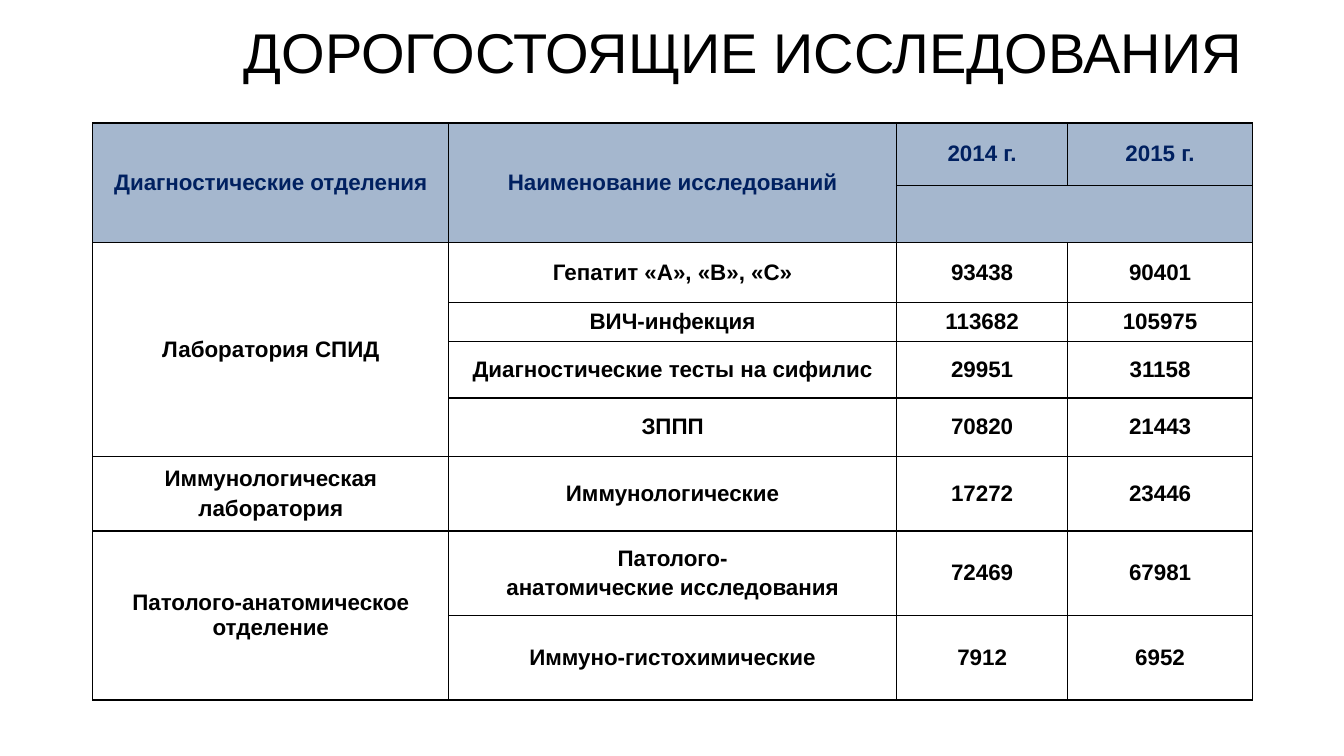
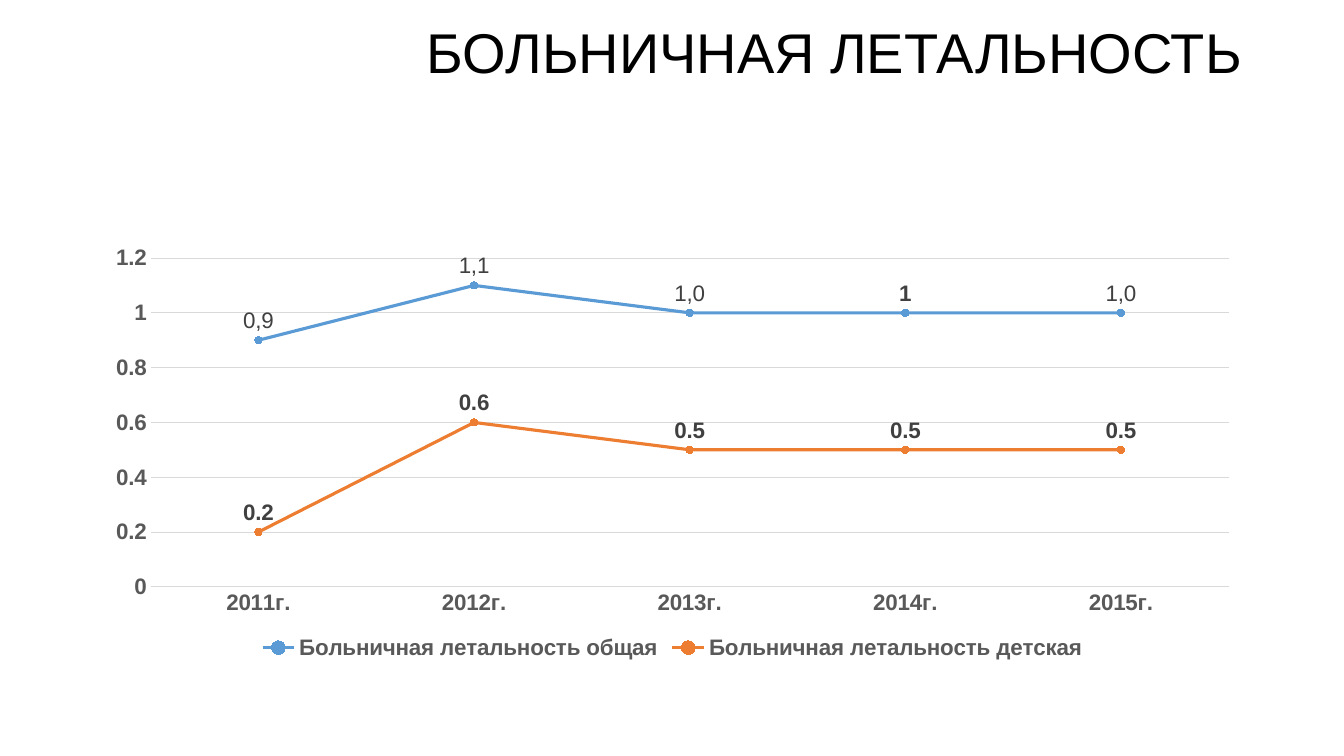
"""Build two hospital slides: a table of costly tests and a chart of mortality."""
from dataclasses import dataclass, field

from lxml import etree
from pptx import Presentation
from pptx.chart.data import CategoryChartData
from pptx.dml.color import RGBColor
from pptx.enum.chart import (
    XL_CHART_TYPE, XL_LABEL_POSITION, XL_LEGEND_POSITION, XL_MARKER_STYLE, XL_TICK_MARK,
)
from pptx.enum.text import MSO_ANCHOR, PP_ALIGN
from pptx.oxml.ns import qn
from pptx.util import Cm, Pt

LINE = XL_CHART_TYPE.LINE_MARKERS
ABOVE = XL_LABEL_POSITION.ABOVE
BOTTOM = XL_LEGEND_POSITION.BOTTOM
CIRCLE = XL_MARKER_STYLE.CIRCLE
NO_TICK = XL_TICK_MARK.NONE
TOP, MIDDLE = MSO_ANCHOR.TOP, MSO_ANCHOR.MIDDLE
CENTER, RIGHT = PP_ALIGN.CENTER, PP_ALIGN.RIGHT


@dataclass(frozen=True)
class Theme:
    font: str = "Arial"
    ink: str = "000000"
    navy: str = "002060"
    head: str = "A5B7CE"
    paper: str = "FFFFFF"
    axis: str = "595959"
    label: str = "404040"
    grid: str = "D9D9D9"
    blue: str = "5B9BD5"
    orange: str = "ED7D31"
    title: float = 40
    lead: float = 56.8
    body: float = 16
    gap: float = 3.2
    border: float = 1
    hair: float = 0.75
    stroke: float = 2.25
    dot: int = 5
    left: float = 2.34
    width: float = 29.21


@dataclass(frozen=True)
class Span:
    row: int
    col: int
    last_row: int
    last_col: int


@dataclass(frozen=True)
class Series:
    name: str
    color: str
    values: tuple[float, ...]
    notes: dict[int, str] = field(default_factory=dict)


THEME = Theme()
COLS = (8.97, 11.28, 4.32, 4.65)
ROWS = (1.57, 1.45, 1.5, 0.99, 1.42, 1.47, 1.88, 2.13, 2.13)
HEADS = 2
CELLS = (
    ("Диагностические отделения", "Наименование исследований", "2014 г.", "2015 г."),
    ("", "", "", ""),
    ("Лаборатория СПИД", "Гепатит «А», «В», «С»", "93438", "90401"),
    ("", "ВИЧ-инфекция", "113682", "105975"),
    ("", "Диагностические тесты на сифилис", "29951", "31158"),
    ("", "ЗППП", "70820", "21443"),
    ("Иммунологическая\nлаборатория", "Иммунологические", "17272", "23446"),
    ("Патолого-анатомическое отделение", "Патолого-\nанатомические исследования",
     "72469", "67981"),
    ("", "Иммуно-гистохимические", "7912", "6952"),
)
SPANS = (Span(0, 0, 1, 0), Span(0, 1, 1, 1), Span(1, 2, 1, 3),
         Span(2, 0, 5, 0), Span(7, 0, 8, 0))
YEARS = tuple(f"{year}г." for year in range(2011, 2016))
LINES = (
    Series("Больничная летальность общая", THEME.blue, (0.9, 1.1, 1, 1, 1),
           {0: "0,9", 1: "1,1", 2: "1,0", 4: "1,0"}),
    Series("Больничная летальность детская", THEME.orange, (0.2, 0.6, 0.5, 0.5, 0.5)),
)


def rgb(code: str) -> RGBColor:
    return RGBColor.from_string(code)


def style(font, size: float, color: str, bold: bool = False) -> None:
    font.name = THEME.font
    font.size = Pt(size)
    font.bold = bold
    font.color.rgb = rgb(color)


def add_run(para, text: str, size: float, color: str, bold: bool = False) -> None:
    run = para.add_run()
    run.text = text
    style(run.font, size, color, bold)


def add_slide(deck, title: str):
    slide = deck.slides.add_slide(deck.slide_layouts[6])
    box = slide.shapes.add_textbox(Cm(THEME.left), Cm(0), Cm(THEME.width), Cm(4.19))
    frame = box.text_frame
    frame.word_wrap = True
    frame.vertical_anchor = TOP
    para = frame.paragraphs[0]
    para.alignment = RIGHT
    para.line_spacing = Pt(THEME.lead)
    add_run(para, title, THEME.title, THEME.ink)
    return slide


def add_edges(cell) -> None:
    props = cell._tc.get_or_add_tcPr()
    for place, side in enumerate(("lnL", "lnR", "lnT", "lnB")):
        edge = etree.Element(qn(f"a:{side}"), w=str(Pt(THEME.border)))
        fill = etree.SubElement(edge, qn("a:solidFill"))
        etree.SubElement(fill, qn("a:srgbClr"), val=THEME.ink)
        props.insert(place, edge)


def fill_cell(cell, text: str, head: bool, spaced: bool) -> None:
    cell.fill.solid()
    cell.fill.fore_color.rgb = rgb(THEME.head if head else THEME.paper)
    cell.vertical_anchor = MIDDLE
    add_edges(cell)
    if not text:
        return
    frame = cell.text_frame
    for index, line in enumerate(text.split("\n")):
        para = frame.add_paragraph() if index else frame.paragraphs[0]
        para.alignment = CENTER
        if spaced:
            para.space_before = Pt(THEME.gap)
        add_run(para, line, THEME.body, THEME.navy if head else THEME.ink, True)


def add_grid(slide) -> None:
    table = slide.shapes.add_table(
        len(ROWS), len(COLS), Cm(THEME.left), Cm(3.1), Cm(sum(COLS)), Cm(sum(ROWS))
    ).table
    for col, width in zip(table.columns, COLS):
        col.width = Cm(width)
    for row, height in zip(table.rows, ROWS):
        row.height = Cm(height)
    for r, texts in enumerate(CELLS):
        for c, text in enumerate(texts):
            head = r < HEADS
            fill_cell(table.cell(r, c), text, head, head or c < 2)
    for span in SPANS:
        table.cell(span.row, span.col).merge(table.cell(span.last_row, span.last_col))


def style_line(line, color: str, width: float) -> None:
    line.color.rgb = rgb(color)
    line.width = Pt(width)


def style_axis(axis) -> None:
    axis.major_tick_mark = NO_TICK
    axis.minor_tick_mark = NO_TICK
    style(axis.tick_labels.font, THEME.body, THEME.axis, True)


def style_series(plot, item: Series) -> None:
    plot.smooth = False
    style_line(plot.format.line, item.color, THEME.stroke)
    plot.marker.style = CIRCLE
    plot.marker.size = THEME.dot
    plot.marker.format.fill.solid()
    plot.marker.format.fill.fore_color.rgb = rgb(item.color)
    plot.marker.format.line.color.rgb = rgb(item.color)
    labels = plot.data_labels
    labels.show_value = True
    labels.position = ABOVE
    style(labels.font, THEME.body, THEME.label, True)
    for index, text in item.notes.items():
        label = plot.points[index].data_label
        add_run(label.text_frame.paragraphs[0], text, THEME.body, THEME.label)
        label.position = ABOVE


def add_graph(slide) -> None:
    data = CategoryChartData()
    data.categories = YEARS
    for item in LINES:
        data.add_series(item.name, item.values)
    chart = slide.shapes.add_chart(
        LINE, Cm(THEME.left), Cm(5.59), Cm(THEME.width), Cm(11.15), data
    ).chart
    chart.has_title = False
    style(chart.font, THEME.body, THEME.ink, True)
    chart.plots[0].vary_by_categories = False
    style_axis(chart.category_axis)
    style_line(chart.category_axis.format.line, THEME.grid, THEME.hair)
    scale = chart.value_axis
    style_axis(scale)
    scale.format.line.fill.background()
    scale.minimum_scale, scale.maximum_scale, scale.major_unit = 0, 1.3, 0.2
    style_line(scale.major_gridlines.format.line, THEME.grid, THEME.hair)
    chart.has_legend = True
    chart.legend.position = BOTTOM
    chart.legend.include_in_layout = False
    style(chart.legend.font, THEME.body, THEME.axis, True)
    for plot, item in zip(chart.plots[0].series, LINES):
        style_series(plot, item)


def main() -> None:
    deck = Presentation()
    deck.slide_width, deck.slide_height = Cm(33.87), Cm(19.05)
    add_grid(add_slide(deck, "ДОРОГОСТОЯЩИЕ ИССЛЕДОВАНИЯ"))
    add_graph(add_slide(deck, "БОЛЬНИЧНАЯ ЛЕТАЛЬНОСТЬ"))
    deck.save("out.pptx")


if __name__ == "__main__":
    main()
